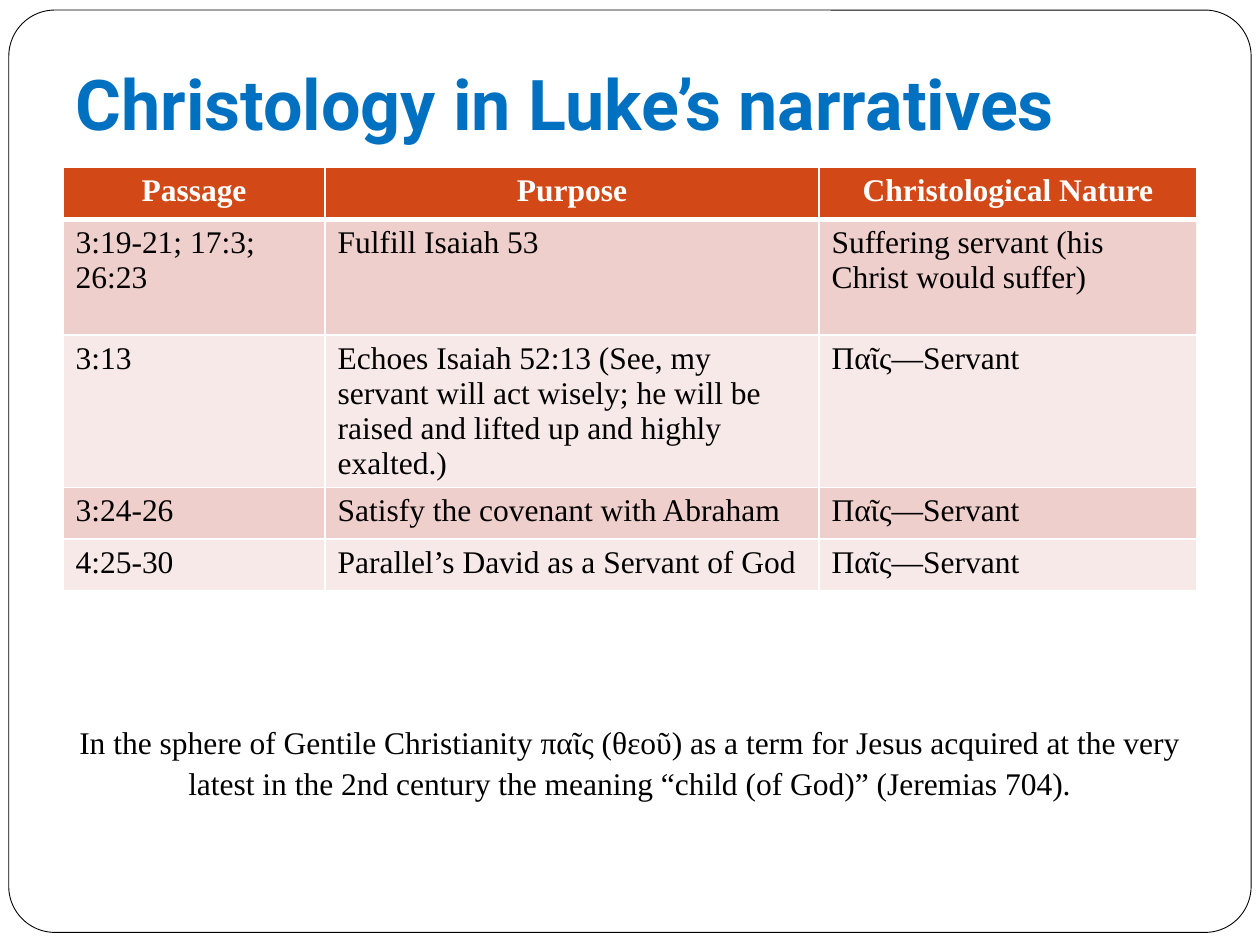
from dataclasses import dataclass

from lxml.etree import SubElement
from pptx import Presentation
from pptx.dml.color import RGBColor
from pptx.enum.shapes import MSO_SHAPE
from pptx.enum.text import MSO_ANCHOR, MSO_AUTO_SIZE, PP_ALIGN
from pptx.oxml.ns import qn
from pptx.util import Inches, Pt


@dataclass(frozen=True)
class Theme:
    title_font: str = "Roboto"
    body_font: str = "Times New Roman"
    title_size: int = 40
    body_size: int = 18
    title: str = "0070C0"
    text: str = "000000"
    paper: str = "FFFFFF"
    header: str = "D34817"
    bands: tuple = ("EFCFCC", "F7E9E8")


def rgb(value):
    return RGBColor.from_string(value)


def write(tf, text, font, size, color, bold=False, align=PP_ALIGN.LEFT, spacing=None):
    p = tf.paragraphs[0]
    p.alignment = align
    p.line_spacing = spacing
    r = p.add_run()
    r.text = text
    r.font.name = font
    r.font.size = Pt(size)
    r.font.bold = bold
    r.font.color.rgb = rgb(color)


def set_borders(cell, color, bottom):
    tcPr = cell._tc.get_or_add_tcPr()
    for side, width in (("L", 1), ("R", 1), ("T", 1), ("B", bottom)):
        ln = SubElement(tcPr, qn(f"a:ln{side}"), w=str(Pt(width)))
        fill = SubElement(ln, qn("a:solidFill"))
        SubElement(fill, qn("a:srgbClr"), val=color)


class Builder:
    def __init__(self, prs, theme):
        self.theme = theme
        self.s = prs.slides.add_slide(prs.slide_layouts[5])

    def frame(self, x, y, w, h):
        sp = self.s.shapes.add_shape(
            MSO_SHAPE.ROUNDED_RECTANGLE, Inches(x), Inches(y), Inches(w), Inches(h))
        sp.adjustments[0] = 0.05
        sp.shadow.inherit = False
        sp.fill.solid()
        sp.fill.fore_color.rgb = rgb(self.theme.paper)
        sp.line.color.rgb = rgb(self.theme.text)
        sp.line.width = Pt(0.5)
        self.s.shapes._spTree.insert(2, sp._element)

    def title(self, text, x, y, w, h):
        sp = self.s.shapes.title
        sp.left, sp.top, sp.width, sp.height = map(Inches, (x, y, w, h))
        tf = sp.text_frame
        tf.word_wrap = True
        tf.auto_size = MSO_AUTO_SIZE.NONE
        tf.vertical_anchor = MSO_ANCHOR.BOTTOM
        tf.margin_bottom = Inches(0.1)
        write(tf, text, self.theme.title_font, self.theme.title_size,
              self.theme.title, bold=True)

    def table(self, rows, widths, heights, x, y):
        t = self.theme
        table = self.s.shapes.add_table(
            len(rows), len(widths), Inches(x), Inches(y),
            Inches(sum(widths)), Inches(sum(heights))).table
        for column, width in zip(table.columns, widths):
            column.width = Inches(width)
        for i, (row, height) in enumerate(zip(rows, heights)):
            table.rows[i].height = Inches(height)
            head = i == 0
            for j, text in enumerate(row):
                cell = table.cell(i, j)
                set_borders(cell, t.paper, bottom=3 if head else 1)
                cell.fill.solid()
                cell.fill.fore_color.rgb = rgb(t.header if head else t.bands[(i - 1) % 2])
                write(cell.text_frame, text, t.body_font, t.body_size,
                      t.paper if head else t.text, bold=head,
                      align=PP_ALIGN.CENTER if head else PP_ALIGN.LEFT)

    def note(self, text, x, y, w, h):
        sp = self.s.shapes.add_textbox(Inches(x), Inches(y), Inches(w), Inches(h))
        tf = sp.text_frame
        tf.word_wrap = True
        tf.auto_size = MSO_AUTO_SIZE.SHAPE_TO_FIT_TEXT
        write(tf, text, self.theme.body_font, self.theme.body_size,
              self.theme.text, align=PP_ALIGN.CENTER, spacing=1.07)


def main():
    prs = Presentation()
    prs.slide_width, prs.slide_height = Inches(10), Inches(7.5)
    b = Builder(prs, Theme())
    left, width = 0.5, 9
    servant = "Παῖς—Servant"
    rows = [
        ("Passage", "Purpose", "Christological Nature"),
        ("3:19-21; 17:3; 26:23", "Fulfill Isaiah 53",
         "Suffering servant (his Christ would suffer)"),
        ("3:13", "Echoes Isaiah 52:13 (See, my servant will act wisely; "
                 "he will be raised and lifted up and highly exalted.)", servant),
        ("3:24-26", "Satisfy the covenant with Abraham", servant),
        ("4:25-30", "Parallel’s David as a Servant of God", servant),
    ]
    b.frame(0.07, 0.08, 9.86, 7.32)
    b.title("Christology in Luke’s narratives", left, 0.3, width, 0.95)
    b.table(rows, (2.08, 3.92, 3), (0.41, 0.92, 1.21, 0.41, 0.41), left, 1.33)
    b.note("In the sphere of Gentile Christianity παῖς (θεοῦ) as a term for Jesus "
           "acquired at the very latest in the 2nd century the meaning "
           "“child (of God)” (Jeremias 704).", left, 5.67, width, 0.71)
    prs.save("out.pptx")


if __name__ == "__main__":
    main()
